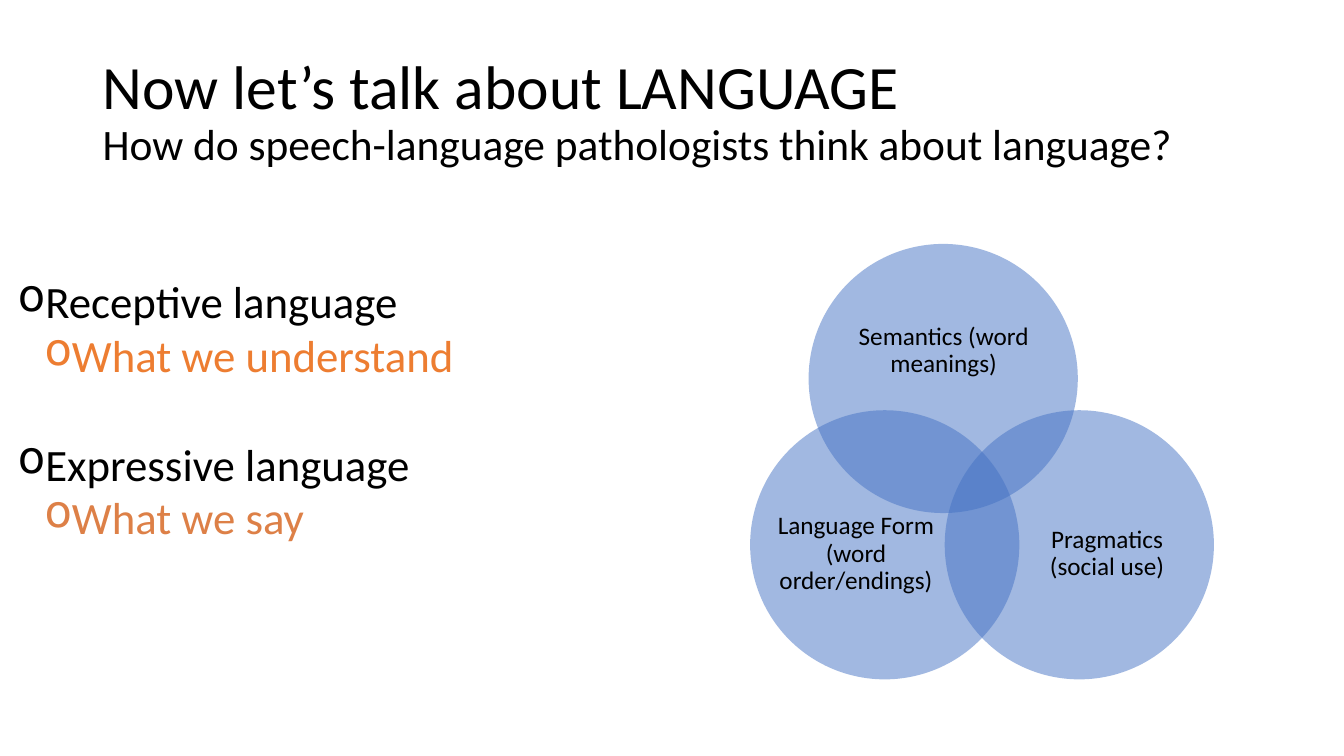
from lxml import etree
from pptx import Presentation
from pptx.dml.color import RGBColor as RGB
from pptx.enum.shapes import MSO_SHAPE as SHAPE
from pptx.enum.text import MSO_ANCHOR as ANCHOR, MSO_AUTO_SIZE as FIT, PP_ALIGN as ALIGN
from pptx.oxml.ns import qn
from pptx.util import Inches, Pt

COLORS = {"text": "000000", "circle": "4472C4", "understand": "ED7D31", "say": "DD8047"}
DIAMETER = 2.67


class LanguageSlide:
    """Holds the style and the current slide."""

    def __init__(self, prs, font="Calibri"):
        self.s = prs.slides.add_slide(prs.slide_layouts[6])
        self.font = font

    def run(self, p, text, size, color="text"):
        r = p.add_run()
        r.text = text
        r.font.name, r.font.size = self.font, Pt(size)
        r.font.color.rgb = RGB.from_string(COLORS[color])

    def box(self, left, top, width, height, anchor=ANCHOR.MIDDLE):
        sp = self.s.shapes.add_textbox(*map(Inches, (left, top, width, height)))
        tf = sp.text_frame
        tf.word_wrap, tf.vertical_anchor = True, anchor
        return tf

    def title(self, at, heading, question):
        p = self.box(*at).paragraphs[0]
        p.line_spacing = 0.9
        self.run(p, heading, 44)
        p.add_line_break()
        self.run(p, question, 31)

    def circle(self, left, top):
        sp = self.s.shapes.add_shape(
            SHAPE.OVAL, *map(Inches, (left, top, DIAMETER, DIAMETER)))
        sp.shadow.inherit = False
        sp.fill.solid()
        sp.fill.fore_color.rgb = RGB.from_string(COLORS["circle"])
        sp.line.fill.background()
        clr = sp.fill._xPr.find(".//" + qn("a:srgbClr"))
        etree.SubElement(clr, qn("a:alpha"), val="50000")

    def label(self, at, text):
        tf = self.box(*at)
        tf.margin_left = tf.margin_right = tf.margin_top = tf.margin_bottom = 0
        p = tf.paragraphs[0]
        p.alignment, p.line_spacing = ALIGN.CENTER, 0.9
        self.run(p, text, 18)

    def bullets(self, at, items):
        tf = self.box(*at, anchor=ANCHOR.TOP)
        tf.word_wrap, tf.auto_size = False, FIT.SHAPE_TO_FIT_TEXT
        for i, (text, level, color) in enumerate(items):
            p = tf.add_paragraph() if i else tf.paragraphs[0]
            p.level = level
            if i and level == 0:
                p.space_before = Pt(39)
            etree.SubElement(p._p.get_or_add_pPr(), qn("a:buChar"), char="o")
            self.run(p, text, 32, color)


def main():
    prs = Presentation()
    prs.slide_width, prs.slide_height = Inches(13.33), Inches(7.5)
    slide = LanguageSlide(prs)
    slide.title((0.92, 0.4, 11.5, 1.45), "Now let’s talk about LANGUAGE",
                "How do speech-language pathologists think about language?")
    for left, top, label_at, text in (
        (8.02, 2.42, (8.38, 2.88, 1.96, 1.2), "Semantics (word meanings)"),
        (9.37, 4.07, (10.18, 4.76, 1.6, 1.47), "Pragmatics (social use)"),
        (7.44, 4.07, (7.69, 4.76, 1.6, 1.47), "Language Form (word order/endings)"),
    ):
        slide.circle(left, top)
        slide.label(label_at, text)
    slide.bullets((0.08, 2.67, 4.69, 2.79), (
        ("Receptive language", 0, "text"),
        ("What we understand", 1, "understand"),
        ("Expressive language", 0, "text"),
        ("What we say", 1, "say"),
    ))
    prs.save("out.pptx")


if __name__ == "__main__":
    main()
